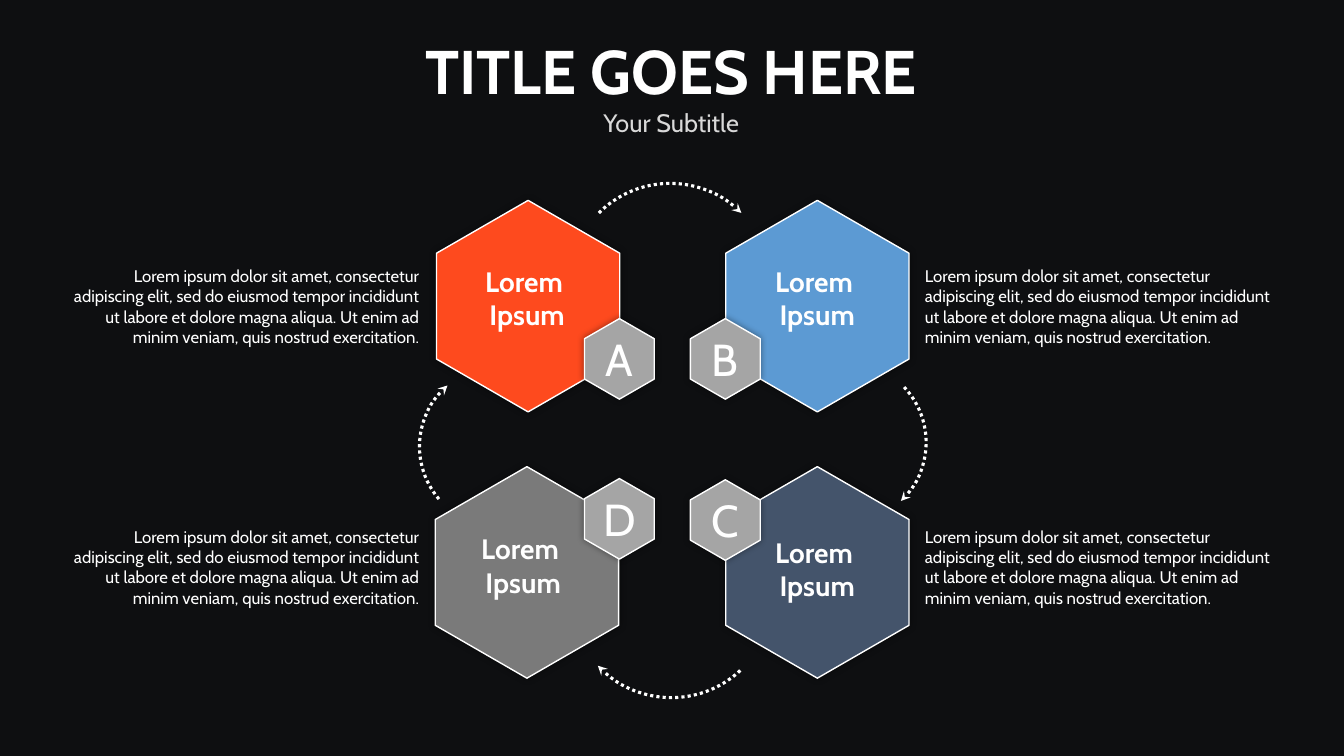
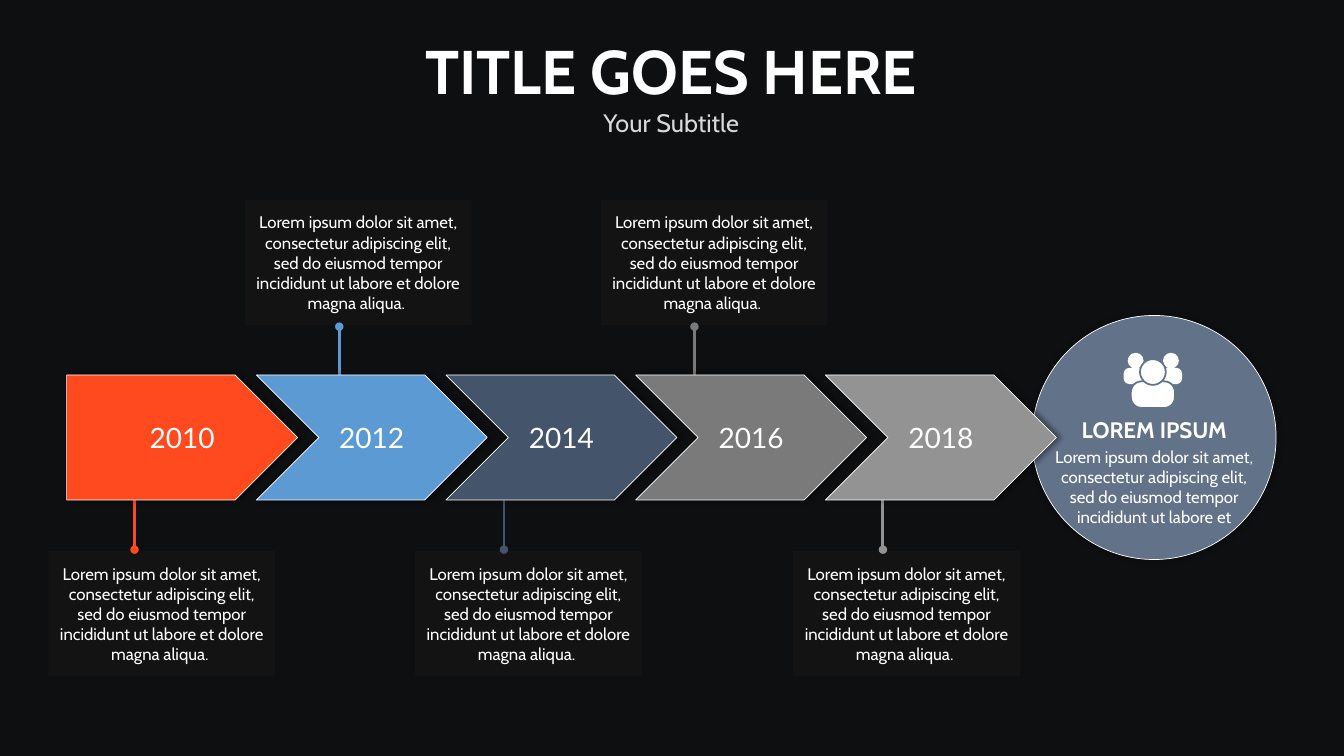
from lxml import etree
from pptx import Presentation
from pptx import util as u
from pptx.dml.color import RGBColor
from pptx.enum import dml, shapes, text
from pptx.oxml.ns import qn

BACKGROUND = RGBColor(0x0E, 0x0F, 0x11)
PANEL = RGBColor(0x18, 0x17, 0x17)
WHITE = RGBColor(0xFF, 0xFF, 0xFF)
SUBTITLE = RGBColor(0xD9, 0xD9, 0xD9)
ORANGE = RGBColor(0xFE, 0x4A, 0x1E)
BLUE = RGBColor(0x5C, 0x9A, 0xD3)
NAVY = RGBColor(0x44, 0x54, 0x6B)
DARK_GREY = RGBColor(0x7A, 0x7A, 0x7A)
MID_GREY = RGBColor(0x93, 0x93, 0x93)
BADGE_GREY = RGBColor(0xA5, 0xA5, 0xA5)
SLATE = RGBColor(0x62, 0x72, 0x89)

PRESET = shapes.MSO_SHAPE
ALIGN = text.PP_ALIGN

SHORT_TEXT = ("Lorem ipsum dolor sit amet, consectetur adipiscing elit, "
              "sed do eiusmod tempor incididunt ut labore et")
NOTE_TEXT = SHORT_TEXT + " dolore magna aliqua. "
LONG_TEXT = NOTE_TEXT + "Ut enim ad minim veniam, quis nostrud exercitation."

HEXAGON = ((0.5, 0), (1, 0.25), (1, 0.75), (0.5, 1), (0, 0.75), (0, 0.25))


def lengths(*values):
    return [u.Cm(value) for value in values]


def write(frame, content, size=12, font="Cabin", color=WHITE, bold=False,
          align=ALIGN.CENTER, before=0):
    """Append each line of content to the frame as a paragraph."""
    frame.word_wrap = True
    for line in content.split("\n"):
        paragraph = frame.paragraphs[0] if not frame.text else frame.add_paragraph()
        paragraph.alignment = align
        if before:
            paragraph.space_before = u.Pt(before)
        run = paragraph.add_run()
        run.text = line
        run.font.size = u.Pt(size)
        run.font.name = font
        run.font.bold = bold
        run.font.color.rgb = color


class Deck:
    def __init__(self):
        self.presentation = Presentation()
        self.presentation.slide_width = u.Cm(33.87)
        self.presentation.slide_height = u.Cm(19.05)
        fill = self.presentation.slide_master.background.fill
        fill.solid()
        fill.fore_color.rgb = BACKGROUND
        self.slide = None

    def new_slide(self, title, subtitle):
        self.slide = self.presentation.slides.add_slide(
            self.presentation.slide_layouts[6])
        frame = self.text_box(9.27, 0.71, 15.29, 2.9, title, size=44, bold=True)
        write(frame, subtitle, size=18, color=SUBTITLE)

    def text_box(self, left, top, width, height, content, insets=None, **style):
        box = self.slide.shapes.add_textbox(*lengths(left, top, width, height))
        frame = box.text_frame
        if insets:
            horizontal, vertical = lengths(*insets)
            frame.margin_left = frame.margin_right = horizontal
            frame.margin_top = frame.margin_bottom = vertical
        write(frame, content, **style)
        return frame

    def paint(self, shape, fill=None, opacity=100, line=None, weight=1, shadow=None):
        """Set fill, outline and an optional (blur, distance) shadow in points."""
        shape.shadow.inherit = False
        properties = shape.element.spPr
        if fill is None:
            shape.fill.background()
        else:
            shape.fill.solid()
            shape.fill.fore_color.rgb = fill
            if opacity < 100:
                color = properties.find(qn("a:solidFill"))[0]
                etree.SubElement(color, qn("a:alpha"), val=str(opacity * 1000))
        if line is None:
            shape.line.fill.background()
        else:
            shape.line.color.rgb = line
            shape.line.width = u.Pt(weight)
        if shadow:
            blur, distance = (str(int(u.Pt(value))) for value in shadow)
            outer = etree.SubElement(
                properties.get_or_add_effectLst(), qn("a:outerShdw"),
                blurRad=blur, dist=distance, dir="0", algn="ctr", rotWithShape="0")
            black = etree.SubElement(outer, qn("a:srgbClr"), val="000000")
            etree.SubElement(black, qn("a:alpha"), val="40000")

    def preset(self, kind, left, top, width, height, **look):
        shape = self.slide.shapes.add_shape(kind, *lengths(left, top, width, height))
        self.paint(shape, **look)
        return shape

    def hexagon(self, left, top, width, height, fill):
        points = [(u.Cm(left + x * width), u.Cm(top + y * height))
                  for x, y in HEXAGON]
        builder = self.slide.shapes.build_freeform(*points[0])
        builder.add_line_segments(points[1:], close=True)
        shape = builder.convert_to_shape()
        self.paint(shape, fill=fill, line=WHITE, shadow=(5, 0))
        return shape

    def line_end(self, shape, kind):
        etree.SubElement(shape.element.spPr.get_or_add_ln(), qn("a:tailEnd"), type=kind)

    def arc_arrow(self, left, top, size, rotation):
        arc = self.preset(PRESET.ARC, left, top, size, size, line=WHITE, weight=2.25)
        arc.rotation = rotation
        arc.line.dash_style = dml.MSO_LINE.ROUND_DOT
        self.line_end(arc, "stealth")

    def pin(self, x, start, end, color):
        """Draw a vertical line that ends in a dot."""
        connector = self.slide.shapes.add_connector(
            shapes.MSO_CONNECTOR.STRAIGHT, *lengths(x, start, x, end))
        connector.line.color.rgb = color
        connector.line.width = u.Pt(2)
        self.line_end(connector, "oval")
        connector.element.spPr.get_or_add_effectLst()

    def people_icon(self, left, top):
        for head, body in ((0.1, 0), (0.99, 0.97)):
            self.preset(PRESET.OVAL, left + head, top, 0.4, 0.4, fill=WHITE)
            shape = self.preset(PRESET.ROUNDED_RECTANGLE, left + body, top + 0.38,
                                0.5, 0.41, fill=WHITE)
            shape.adjustments[0] = 0.35
        front = dict(fill=WHITE, line=SLATE, weight=1.25)
        body = self.preset(PRESET.ROUNDED_RECTANGLE, left + 0.18, top + 0.72,
                           1.11, 0.67, **front)
        body.adjustments[0] = 0.4
        self.preset(PRESET.OVAL, left + 0.41, top + 0.16, 0.65, 0.65, **front)


def cycle_slide(deck):
    deck.new_slide("TITLE GOES HERE", "Your Subtitle")
    for arrow in ((19.28, 9.12, 4.06, 46.6), (10.57, 9.22, 4.06, 229.3),
                  (14.38, 12.5, 5.08, 136.9), (14.35, 4.62, 5.08, 315)):
        deck.arc_arrow(*arrow)
    for left, align in ((23.06, ALIGN.LEFT), (1.35, ALIGN.RIGHT)):
        for top in (6.58, 13.15):
            deck.text_box(left, top, 9.47, 2.31, LONG_TEXT, align=align)

    # hexagon left and top, colour, label left and top
    steps = ((11, 5.05, ORANGE, 11.38, 6.53), (18.29, 5.05, BLUE, 18.69, 6.53),
             (10.97, 11.76, DARK_GREY, 11.28, 13.28),
             (18.29, 11.76, NAVY, 18.69, 13.36))
    for left, top, color, label_left, label_top in steps:
        deck.hexagon(left, top, 4.62, 5.33, color)
        deck.text_box(label_left, label_top, 3.81, 1.96, "Lorem \nIpsum",
                      size=20, bold=True)
    for letter, left, top in (("A", 14.73, 8.03), ("B", 17.4, 8.03),
                              ("D", 14.73, 12.06), ("C", 17.4, 12.09)):
        badge = deck.hexagon(left, top, 1.76, 2.03, BADGE_GREY)
        badge.text_frame.margin_left = badge.text_frame.margin_right = u.Cm(0.33)
        write(badge.text_frame, letter, size=32)


def timeline_slide(deck):
    deck.new_slide("TITLE GOES HERE", "Your Subtitle")
    deck.preset(PRESET.OVAL, 26.01, 7.95, 6.15, 6.15, fill=SLATE, line=WHITE,
                weight=0.5, shadow=(5, 0))

    # year, colour, note left, pin position
    periods = (("2010", ORANGE, 1.22, 3.39), ("2012", BLUE, 6.17, 8.55),
               ("2014", NAVY, 10.46, 12.7), ("2016", DARK_GREY, 15.14, 17.5),
               ("2018", MID_GREY, 19.99, 22.25))
    for index, (year, color, note_left, pin_x) in enumerate(periods):
        above = index % 2
        note = deck.preset(PRESET.RECTANGLE, note_left, 5.04 if above else 13.89,
                           5.72, 3.15, fill=PANEL, opacity=50)
        write(note.text_frame, NOTE_TEXT)
        start, end = (9.47, 8.23) if above else (12.6, 13.85)
        deck.pin(pin_x, start, end, color)

    deck.people_icon(28.32, 8.89)
    frame = deck.text_box(26.31, 10.41, 5.56, 3, "LOREM IPSUM",
                          insets=(0.18, 0.08), size=16, bold=True)
    write(frame, SHORT_TEXT, before=2.4)

    for index, (year, color, *_) in enumerate(periods):
        kind = PRESET.CHEVRON if index else PRESET.PENTAGON
        arrow = deck.preset(kind, 1.68 + 4.78 * index, 9.45, 5.82, 3.15, fill=color,
                            line=WHITE, weight=0.5, shadow=(4, 3))
        if not index:
            arrow.text_frame.margin_left = u.Cm(1.04)
        write(arrow.text_frame, year, size=20, font="Lato")


def main():
    deck = Deck()
    cycle_slide(deck)
    timeline_slide(deck)
    deck.presentation.save("out.pptx")


if __name__ == "__main__":
    main()
